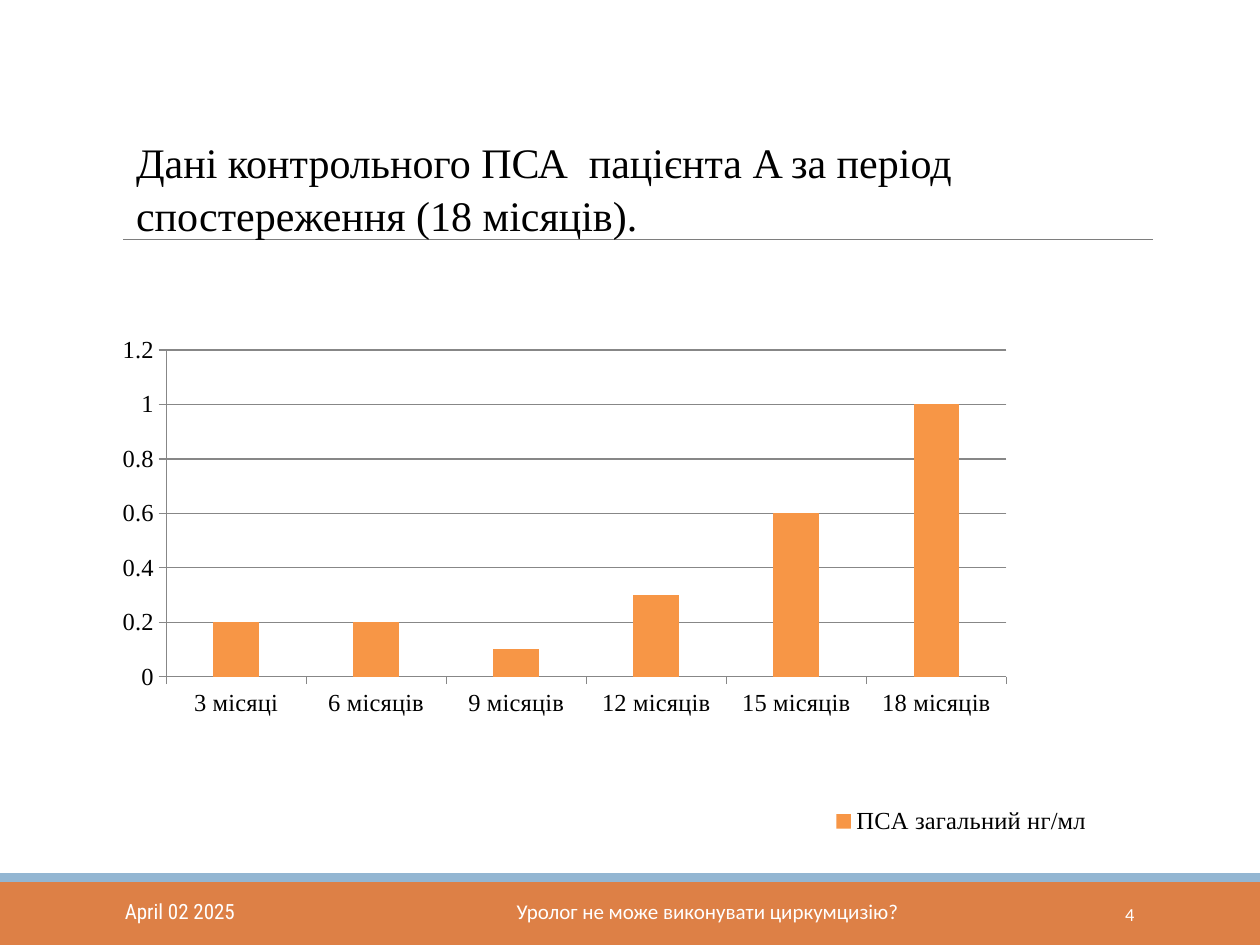
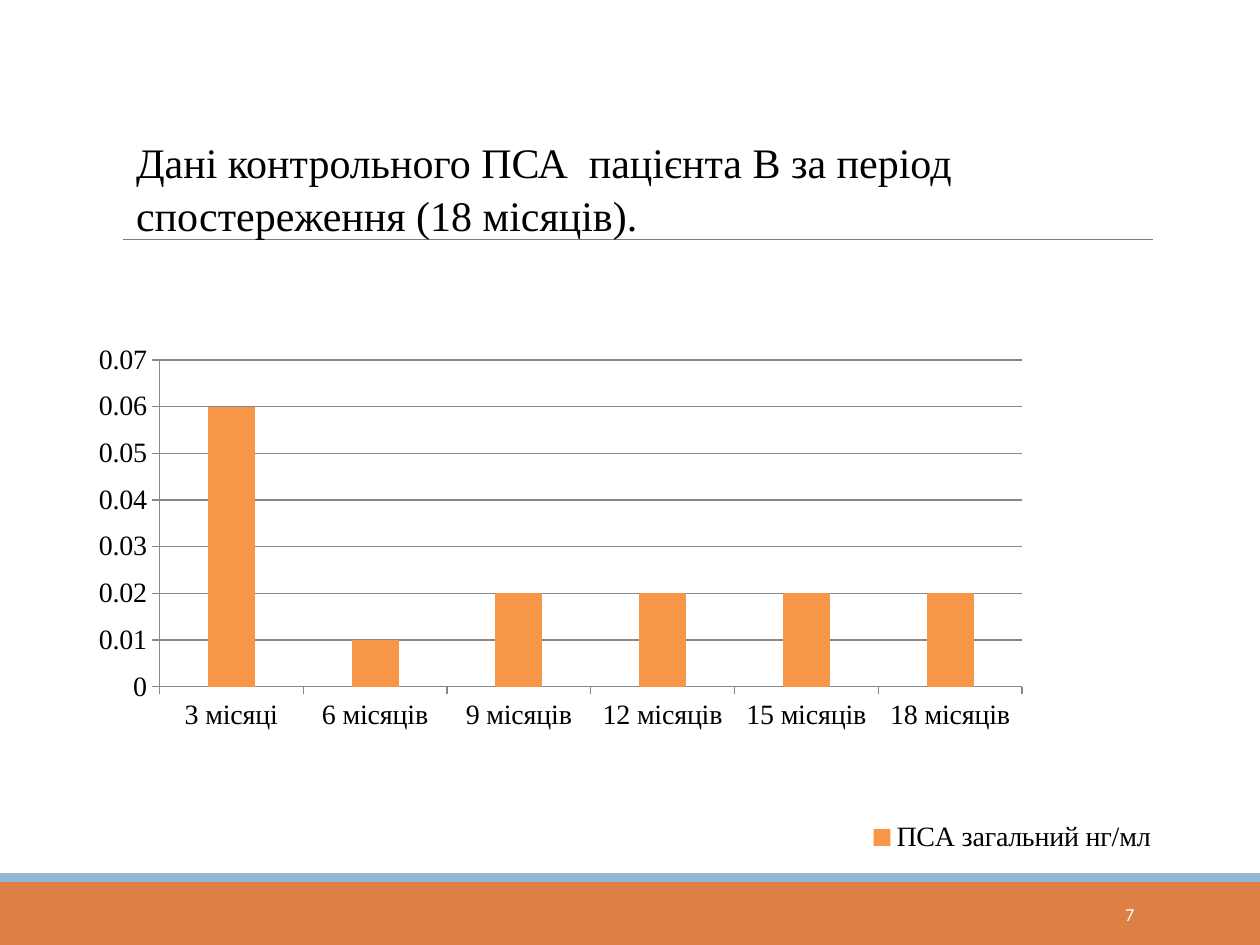
"""Build two slides charting control PSA values of patients A and B over 18 months."""
import pptx
import pptx.chart.data
import pptx.dml.color
import pptx.enum.chart
import pptx.enum.shapes
import pptx.enum.text
import pptx.oxml
import pptx.oxml.ns
import pptx.util

prs = pptx.Presentation()
prs.slide_width = pptx.util.Inches(10)
prs.slide_height = pptx.util.Inches(7.5)
COL = prs.slide_width // 100
ROW = prs.slide_height // 75

ORANGE, BLUE, GREY = "DD8046", "93B6D2", "7E7E7E"
BAR, AXIS, BLACK, WHITE = "F79646", "878787", "000000", "FFFFFF"
SERIF = "Times New Roman"
MONTHS = ["3 місяці", "6 місяців", "9 місяців", "12 місяців", "15 місяців", "18 місяців"]
TITLE = "Дані контрольного ПСА  пацієнта {} за період спостереження (18 місяців)."
BANDS = [(70, 5, ORANGE), (69.3, 0.7, BLUE)]
DATE = ("April 02 2025", (9.9, 72, 13.5, 1.4), "Roboto Condensed", 12, 9.6)
TALK = ("Уролог не може виконувати циркумцизію?", (41, 72, 34, 1.4), "Calibri", 12, 9.6)

SLIDES = [
    {"patient": "A", "number": "4", "footers": [DATE, TALK], "size": 14,
     "box": (3.3, 20, 94.2, 48.6), "values": [0.2, 0.2, 0.1, 0.3, 0.6, 1],
     "top": 1.2, "step": 0.2, "legend": (0.66, 0.9, 0.23, 0.06)},
    {"patient": "B", "number": "7", "footers": [], "size": 16,
     "box": (2.5, 20.8, 96.7, 48.6), "values": [0.06, 0.01, 0.02, 0.02, 0.02, 0.02],
     "top": 0.07, "step": 0.01, "legend": (0.68, 0.91, 0.25, 0.06)},
]


def rgb(value):
    return pptx.dml.color.RGBColor.from_string(value)


def add_text(s, text, box, name, size, color, spacing, top=0):
    x, y, w, h = box
    tf = s.shapes.add_textbox(int(x * COL), int(y * ROW), int(w * COL), int(h * ROW)).text_frame
    frame = {"margin_left": 0, "margin_right": 0, "margin_top": int(top * ROW),
             "margin_bottom": 0, "word_wrap": True,
             "auto_size": pptx.enum.text.MSO_AUTO_SIZE.SHAPE_TO_FIT_TEXT}
    for key, value in frame.items():
        setattr(tf, key, value)
    p = tf.paragraphs[0]
    p.line_spacing = spacing
    r = p.add_run()
    r.text = text
    for key, value in {"name": name, "size": pptx.util.Pt(size)}.items():
        setattr(r.font, key, value)
    r.font.color.rgb = rgb(color)


for data in SLIDES:
    s = prs.slides.add_slide(prs.slide_layouts[6])

    for y, h, color in BANDS:
        sp = s.shapes.add_shape(pptx.enum.shapes.MSO_SHAPE.RECTANGLE,
                                0, int(y * ROW), prs.slide_width, int(h * ROW))
        sp.shadow.inherit = False
        sp.fill.solid()
        sp.fill.fore_color.rgb = rgb(color)
        sp.line.fill.background()

    rule = s.shapes.add_connector(pptx.enum.shapes.MSO_CONNECTOR.STRAIGHT,
                                  int(9.8 * COL), 19 * ROW, int(91.5 * COL), 19 * ROW)
    rule.line.color.rgb = rgb(GREY)
    rule.line.width = pptx.util.Pt(0.48)
    rule._element.spPr.append(pptx.oxml.parse_xml(
        "<a:effectLst %s/>" % pptx.oxml.ns.nsdecls("a")))

    add_text(s, TITLE.format(data["patient"]), (10.8, 9.2, 76.5, 9.5), SERIF, 24, BLACK, 1.06, 1.4)
    number = (data["number"], (89.3, 71.9, 2.2, 1.7), "Calibri", 10.5, 11)
    for text, box, name, size, spacing in data["footers"] + [number]:
        add_text(s, text, box, name, size, WHITE, pptx.util.Pt(spacing))

    cd = pptx.chart.data.CategoryChartData()
    cd.categories = MONTHS
    cd.add_series("ПСА загальний нг/мл", data["values"])
    x, y, w, h = data["box"]
    chart = s.shapes.add_chart(pptx.enum.chart.XL_CHART_TYPE.COLUMN_CLUSTERED,
                               int(x * COL), int(y * ROW), int(w * COL), int(h * ROW), cd).chart
    chart.has_title = False
    chart.has_legend = True
    chart.legend.position = pptx.enum.chart.XL_LEGEND_POSITION.RIGHT
    chart.legend.include_in_layout = False
    for font in (chart.font, chart.legend.font):
        for key, value in {"name": SERIF, "size": pptx.util.Pt(data["size"])}.items():
            setattr(font, key, value)
        font.color.rgb = rgb(BLACK)

    plot = chart.plots[0]
    for key, value in {"gap_width": 206, "overlap": 24, "vary_by_categories": False}.items():
        setattr(plot, key, value)
    fill = plot.series[0].format.fill
    fill.solid()
    fill.fore_color.rgb = rgb(BAR)

    scale = {"minimum_scale": 0, "maximum_scale": data["top"],
             "major_unit": data["step"], "has_major_gridlines": True}
    for key, value in scale.items():
        setattr(chart.value_axis, key, value)
    for axis in (chart.category_axis, chart.value_axis):
        axis.major_tick_mark = pptx.enum.chart.XL_TICK_MARK.OUTSIDE
    for part in (chart.category_axis, chart.value_axis, chart.value_axis.major_gridlines):
        part.format.line.color.rgb = rgb(AXIS)
        part.format.line.width = pptx.util.Pt(0.75)

    layouts = [("c:plotArea", 0, '<c:layoutTarget val="inner"/>', (0.105, 0.16, 0.708, 0.534)),
               ("c:legend", 1, "", data["legend"])]
    for tag, index, target, shares in layouts:
        parent = chart._chartSpace.find(".//" + pptx.oxml.ns.qn(tag))
        for old in parent.findall(pptx.oxml.ns.qn("c:layout")):
            parent.remove(old)
        edges = "".join('<c:%sMode val="edge"/>' % key for key in "xy")
        sizes = "".join('<c:%s val="%s"/>' % pair for pair in zip("xywh", shares))
        parent.insert(index, pptx.oxml.parse_xml(
            "<c:layout %s><c:manualLayout>%s</c:manualLayout></c:layout>"
            % (pptx.oxml.ns.nsdecls("c"), target + edges + sizes)))

prs.save("out.pptx")
